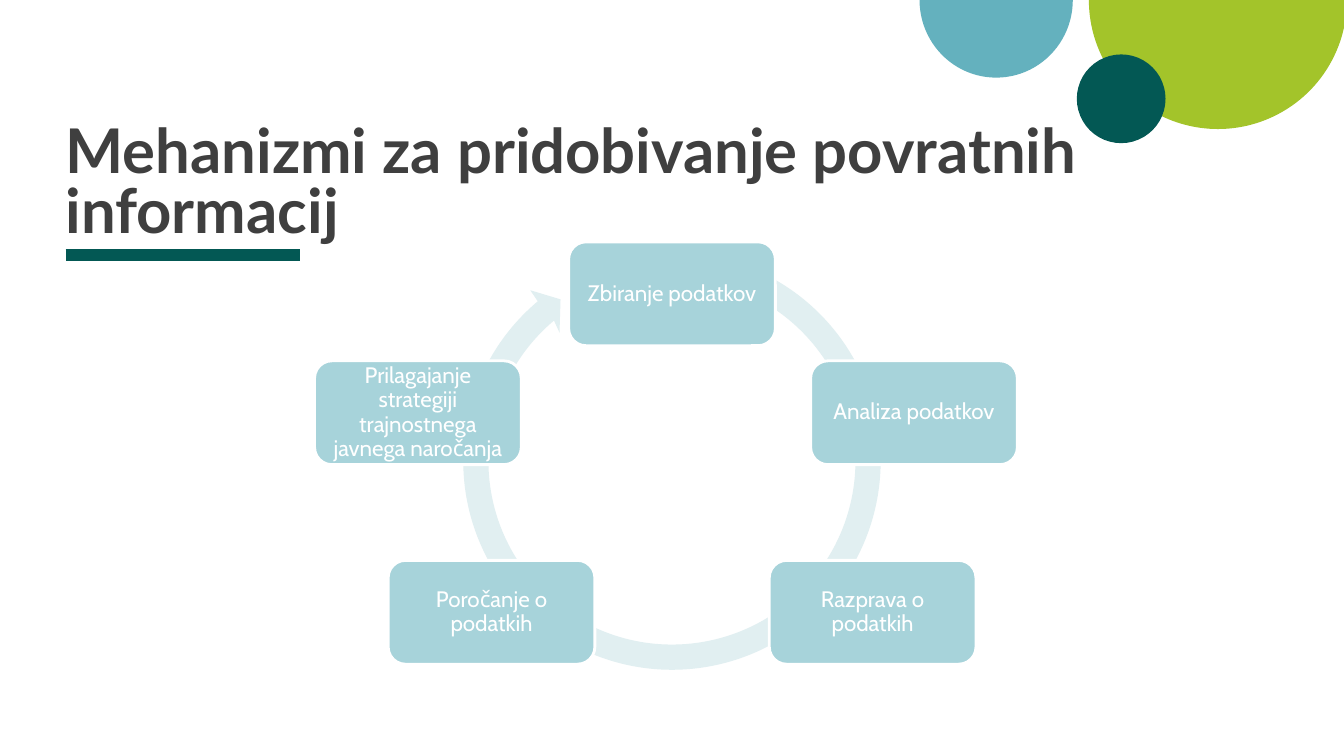
from dataclasses import dataclass
from math import cos, radians, sin, tan

from lxml.etree import SubElement
from pptx import Presentation
from pptx.dml.color import RGBColor
from pptx.enum.shapes import MSO_CONNECTOR, MSO_SHAPE
from pptx.enum.text import MSO_ANCHOR, MSO_AUTO_SIZE, PP_ALIGN
from pptx.oxml.ns import qn
from pptx.util import Pt

EMU_PER_PX = 9144  # 100 px to the inch


@dataclass(frozen=True)
class Theme:
    dark: str = "035854"
    green: str = "A3C42A"
    teal: str = "64B1BE"
    step: str = "A7D3DA"
    ring: str = "E1EFF1"
    white: str = "FFFFFF"
    ink: str = "3F3F3F"
    title_font: str = "Lato"
    body_font: str = "Cabin"
    title_size: int = 44
    body_size: int = 16
    rule_width: int = 8
    outline_width: int = 2


def px(*lengths):
    return [round(length * EMU_PER_PX) for length in lengths]


def write(frame, text, *, font, size, color, spacing, anchor, align, inset=0, bold=False):
    """Put one formatted paragraph into a text frame."""
    frame.word_wrap = True
    frame.auto_size = MSO_AUTO_SIZE.NONE
    frame.vertical_anchor = anchor
    (margin,) = px(inset)
    frame.margin_left = frame.margin_right = margin
    frame.margin_top = frame.margin_bottom = margin
    para = frame.paragraphs[0]
    para.alignment = align
    para.line_spacing = spacing
    span = para.add_run()
    span.text = text
    span.font.name = font
    span.font.size = Pt(size)
    span.font.bold = bold
    span.font.color.rgb = RGBColor.from_string(color)


def arc_points(center, radius, start, sweep, pieces=5):
    """Start point, then two handles and an end point for each Bezier piece."""
    turn = radians(sweep / pieces)
    handle = 4 / 3 * tan(turn / 4)

    def at(angle, offset):
        return (center[0] + radius * (cos(angle) - offset * sin(angle)),
                center[1] + radius * (sin(angle) + offset * cos(angle)))

    points = [at(radians(start), 0)]
    for piece in range(pieces):
        angle = radians(start) + piece * turn
        points += [at(angle, handle), at(angle + turn, -handle), at(angle + turn, 0)]
    return points


def bend(segments):
    """Turn each three straight segments into one cubic curve."""
    for first in range(0, len(segments), 3):
        trio = segments[first:first + 3]
        outline = trio[0].getparent()
        curve = SubElement(outline, qn("a:cubicBezTo"))
        outline.replace(trio[0], curve)
        for segment in trio:
            curve.append(segment[0])
        for segment in trio[1:]:
            outline.remove(segment)


class SlideBuilder:
    def __init__(self, page, theme):
        self.page = page
        self.theme = theme

    def paint(self, shape, fill, outline=None):
        shape.shadow.inherit = False
        shape.fill.solid()
        shape.fill.fore_color.rgb = RGBColor.from_string(fill)
        if outline:
            shape.line.color.rgb = RGBColor.from_string(outline)
            shape.line.width = Pt(self.theme.outline_width)
        else:
            shape.line.fill.background()

    def title(self, text, *bounds):
        box = self.page.shapes.title
        box.left, box.top, box.width, box.height = px(*bounds)
        write(box.text_frame, text, font=self.theme.title_font, size=self.theme.title_size,
              color=self.theme.ink, spacing=0.8, anchor=MSO_ANCHOR.BOTTOM,
              align=PP_ALIGN.LEFT, bold=True)

    def rule(self, *ends):
        line = self.page.shapes.add_connector(MSO_CONNECTOR.STRAIGHT, *px(*ends))
        line.line.color.rgb = RGBColor.from_string(self.theme.dark)
        line.line.width = Pt(self.theme.rule_width)
        SubElement(line._element.spPr, qn("a:effectLst"))

    def half_disc(self, color, *bounds):
        disc = self.page.shapes.add_shape(MSO_SHAPE.PIE, *px(*bounds))
        disc.adjustments[0] = 0
        disc.adjustments[1] = 108  # 180 degrees
        self.paint(disc, color)

    def disc(self, color, *bounds):
        self.paint(self.page.shapes.add_shape(MSO_SHAPE.OVAL, *px(*bounds)), color)

    def ring_arrow(self, left, top, size, outer, inner, start, end, head):
        """Clockwise ring from start to end (degrees), closed by an arrowhead."""
        center = (left + size / 2, top + size / 2)
        outside = arc_points(center, outer, start, end - start)
        inside = arc_points(center, inner, end, start - end)
        corners = [tuple(px(*point)) for point in outside + head + inside]
        builder = self.page.shapes.build_freeform(*corners[0])
        builder.add_line_segments(corners[1:], close=True)
        ring = builder.convert_to_shape()
        segments = list(ring._element.iter(qn("a:lnTo")))
        curved = len(outside) - 1
        bend(segments[:curved])
        bend(segments[-curved:])
        self.paint(ring, self.theme.ring)

    def step(self, text, left, top):
        box = self.page.shapes.add_shape(MSO_SHAPE.ROUNDED_RECTANGLE, *px(left, top, 205, 103))
        self.paint(box, self.theme.step, self.theme.white)
        write(box.text_frame, text, font=self.theme.body_font, size=self.theme.body_size,
              color=self.theme.white, spacing=0.9, anchor=MSO_ANCHOR.MIDDLE,
              align=PP_ALIGN.CENTER, inset=11)


def main():
    deck = Presentation()
    deck.slide_width, deck.slide_height = px(1333, 750)
    theme = Theme()
    builder = SlideBuilder(deck.slides.add_slide(deck.slide_layouts[5]), theme)

    # Corner decoration and title
    builder.rule(65, 253, 298, 253)
    builder.half_disc(theme.green, 1080, -128, 256, 256)
    builder.half_disc(theme.teal, 912, -77, 152, 154)
    builder.disc(theme.dark, 1068, 54, 88, 88)
    builder.title("Mehanizmi za pridobivanje povratnih informacij", 65, 184, 1209, 59)

    # Feedback cycle
    builder.ring_arrow(446, 237, 441, outer=207, inner=182, start=-70, end=230,
                       head=[(526, 288), (556, 297), (555, 330)])
    steps = [
        ("Zbiranje podatkov", 564, 240),
        ("Analiza podatkov", 804, 358),
        ("Razprava o podatkih", 763, 556),
        ("Poročanje o podatkih", 385, 556),
        ("Prilagajanje strategiji trajnostnega javnega naročanja", 312, 358),
    ]
    for text, left, top in steps:
        builder.step(text, left, top)

    deck.save("out.pptx")


if __name__ == "__main__":
    main()
